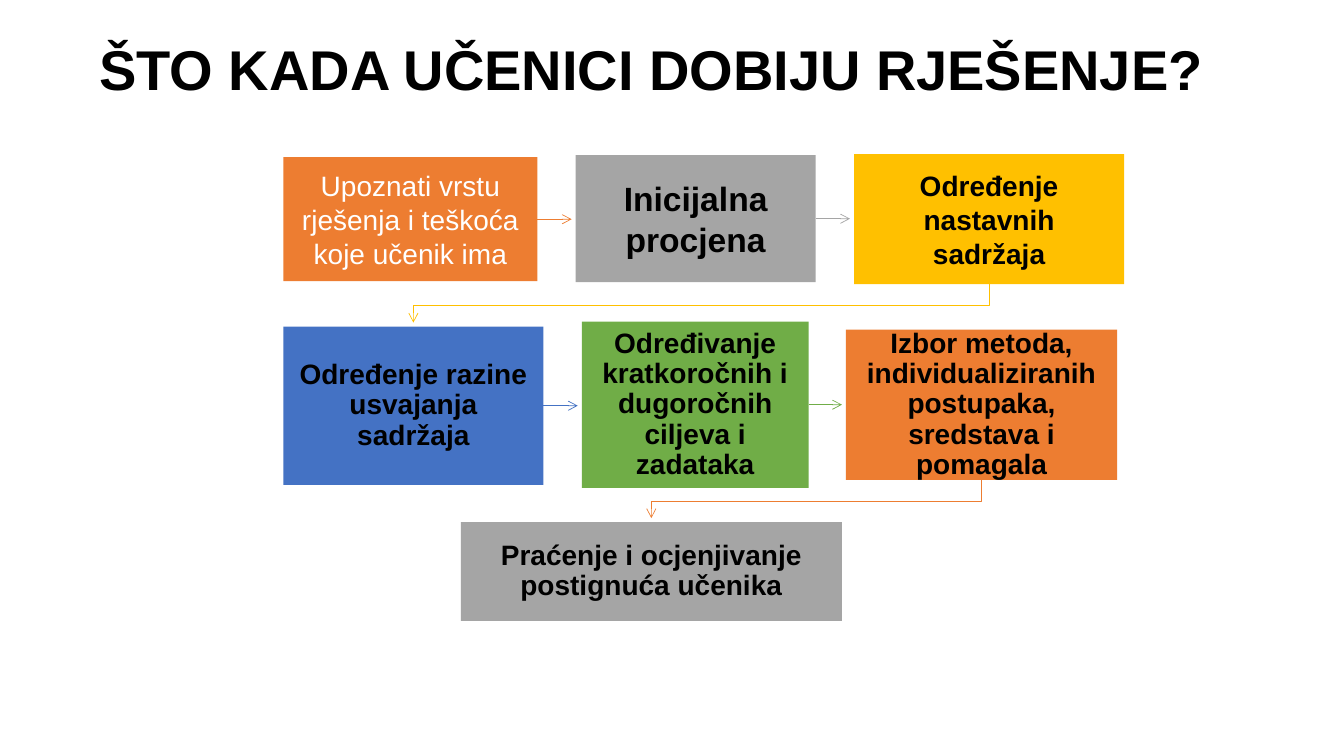
"""Build a slide with the seven-step flow that follows a pupil's ruling."""
from dataclasses import dataclass

from lxml import etree
from pptx import Presentation
from pptx.dml.color import RGBColor
from pptx.enum import shapes, text
from pptx.oxml import ns
from pptx.util import Inches, Pt

COLORS = {
    "orange": "ED7D31",
    "gray": "A5A5A5",
    "gold": "FFC000",
    "blue": "4472C4",
    "green": "70AD47",
    "black": "000000",
    "white": "FFFFFF",
}
FONT = "Arial"
GAP = 0.04
DROP = 0.21


@dataclass
class Step:
    """One box of the flow, measured in inches."""

    label: str
    fill: str
    left: float
    top: float
    width: float
    height: float
    color: str = "black"
    bold: bool = True
    size: int = 20
    inset: float = 0.16
    spacing: float = 0.9

    @property
    def center_x(self) -> float:
        """Return the horizontal middle."""
        return self.left + self.width / 2

    @property
    def center_y(self) -> float:
        """Return the vertical middle."""
        return self.top + self.height / 2

    @property
    def right(self) -> float:
        """Return the right edge."""
        return self.left + self.width

    @property
    def bottom(self) -> float:
        """Return the bottom edge."""
        return self.top + self.height


STEPS = [
    Step("Upoznati vrstu rješenja i teškoća koje učenik ima", "orange",
         2.81, 1.56, 2.52, 1.23, color="white", bold=False, spacing=1.0),
    Step("Inicijalna procjena", "gray",
         5.71, 1.54, 2.38, 1.26, size=24, inset=0.19, spacing=1.0),
    Step("Određenje nastavnih sadržaja", "gold",
         8.47, 1.53, 2.68, 1.29, spacing=1.0),
    Step("Određenje razine usvajanja sadržaja", "blue",
         2.81, 3.24, 2.58, 1.57),
    Step("Određivanje kratkoročnih i dugoročnih ciljeva i zadataka", "green",
         5.77, 3.19, 2.25, 1.65),
    Step("Izbor metoda, individualiziranih postupaka, sredstava i pomagala",
         "orange", 8.39, 3.27, 2.69, 1.49),
    Step("Praćenje i ocjenjivanje postignuća učenika", "gray",
         4.57, 5.18, 3.78, 0.98),
]


def rgb(name: str) -> RGBColor:
    """Return a named colour."""
    return RGBColor.from_string(COLORS[name])


def format_text(p, size: int, color: str, bold: bool) -> None:
    """Centre a paragraph and set its font."""
    p.alignment = text.PP_ALIGN.CENTER
    p.font.name = FONT
    p.font.size = Pt(size)
    p.font.bold = bold
    p.font.color.rgb = rgb(color)


def add_title(slide, label: str) -> None:
    """Fill and place the title placeholder."""
    sp = slide.shapes.title
    sp.left, sp.top = Inches(0.66), Inches(0.36)
    sp.width, sp.height = Inches(11.6), Inches(0.63)
    tf = sp.text_frame
    tf.text = label
    tf.auto_size = text.MSO_AUTO_SIZE.NONE
    tf.vertical_anchor = text.MSO_ANCHOR.MIDDLE
    format_text(tf.paragraphs[0], 40, "black", True)


def add_box(slide, step: Step):
    """Draw the box of a step."""
    sp = slide.shapes.add_shape(
        shapes.MSO_SHAPE.RECTANGLE, Inches(step.left), Inches(step.top),
        Inches(step.width), Inches(step.height))
    sp.shadow.inherit = False
    sp.fill.solid()
    sp.fill.fore_color.rgb = rgb(step.fill)
    sp.line.fill.background()
    tf = sp.text_frame
    tf.word_wrap = True
    tf.vertical_anchor = text.MSO_ANCHOR.MIDDLE
    tf.margin_left = tf.margin_right = Inches(step.inset)
    tf.margin_top = tf.margin_bottom = Inches(step.inset)
    tf.text = step.label
    p = tf.paragraphs[0]
    p.line_spacing = step.spacing
    format_text(p, step.size, step.color, step.bold)
    return sp


def style_arrow(line, color: str) -> None:
    """Give a line its colour, width and open arrowhead."""
    line.color.rgb = rgb(color)
    line.width = Pt(0.5)
    ln = line.fill._xPr
    etree.SubElement(ln, ns.qn("a:tailEnd"), type="arrow")


def add_straight_arrow(slide, start: Step, end: Step, box) -> None:
    """Point from a box to its neighbour on the right."""
    y = Inches(start.center_y)
    cxn = slide.shapes.add_connector(
        shapes.MSO_CONNECTOR.STRAIGHT, Inches(start.right), y,
        Inches(end.left - GAP), y)
    cxn.begin_connect(box, 3)
    style_arrow(cxn.line, start.fill)
    etree.SubElement(cxn._element.spPr, ns.qn("a:effectLst"))


def add_elbow_arrow(slide, start: Step, end: Step) -> None:
    """Point from the bottom of a box to the first box of the next row."""
    bend = start.bottom + DROP
    route = [(start.center_x, start.bottom), (start.center_x, bend),
             (end.center_x, bend), (end.center_x, end.top - GAP)]
    points = [(Inches(x), Inches(y)) for x, y in route]
    builder = slide.shapes.build_freeform(*points[0])
    builder.add_line_segments(points[1:], close=False)
    sp = builder.convert_to_shape()
    sp.shadow.inherit = False
    sp.fill.background()
    style_arrow(sp.line, start.fill)


def main() -> None:
    """Build and save the slide."""
    prs = Presentation()
    prs.slide_width, prs.slide_height = Inches(13.33), Inches(7.5)
    slide = prs.slides.add_slide(prs.slide_layouts[5])
    add_title(slide, "ŠTO KADA UČENICI DOBIJU RJEŠENJE?")
    boxes = [add_box(slide, step) for step in STEPS]
    for start, end, box in zip(STEPS, STEPS[1:], boxes):
        if end.left > start.left:
            add_straight_arrow(slide, start, end, box)
        else:
            add_elbow_arrow(slide, start, end)
    prs.save("out.pptx")


if __name__ == "__main__":
    main()
